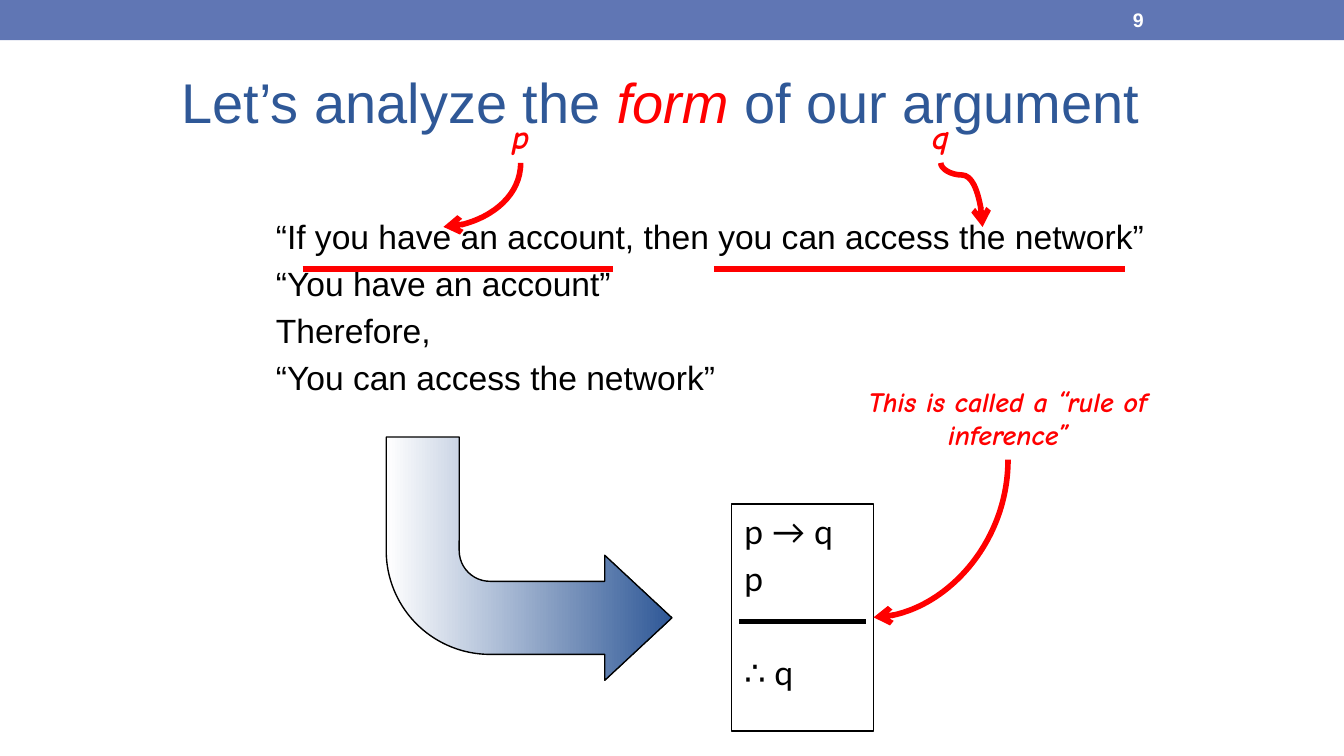
from dataclasses import dataclass

from lxml.etree import SubElement
from pptx import Presentation
from pptx.dml.color import RGBColor
from pptx.enum.shapes import MSO_CONNECTOR, MSO_SHAPE
from pptx.enum.text import MSO_ANCHOR, MSO_AUTO_SIZE, PP_ALIGN
from pptx.oxml.ns import qn
from pptx.util import Cm, Pt


@dataclass(frozen=True)
class Theme:
    bar: RGBColor = RGBColor(0x60, 0x76, 0xB4)
    accent: RGBColor = RGBColor(0x2F, 0x58, 0x97)
    red: RGBColor = RGBColor(0xFF, 0, 0)
    black: RGBColor = RGBColor(0, 0, 0)
    white: RGBColor = RGBColor(0xFF, 0xFF, 0xFF)
    main_font: str = "Arial"
    logic_font: str = "Lato"
    note_font: str = "Comic Neue"
    title: float = 30
    body: float = 18
    note: float = 15
    number: float = 10.5
    thin: float = 0.75
    thick: float = 3
    gap: float = 3.6


T = Theme()


def place(sp, left, top, width, height):
    sp.left, sp.top, sp.width, sp.height = Cm(left), Cm(top), Cm(width), Cm(height)


def style(p, font, size, color, bold=False, italic=False):
    for r in p.runs:
        f = r.font
        f.name, f.size, f.bold, f.italic = font, Pt(size), bold, italic
        f.color.rgb = color


def hang(p, margin, indent):
    pPr = p._p.get_or_add_pPr()
    pPr.set("marL", str(Cm(margin)))
    pPr.set("indent", str(Cm(indent)))
    SubElement(pPr, qn("a:buNone"))


def write_lines(tf, lines, font, margin, indent, gaps):
    tf.text = "\n".join(lines)
    for p, gap in zip(tf.paragraphs, gaps):
        p.alignment = PP_ALIGN.LEFT
        p.space_before = Pt(gap)
        style(p, font, T.body, T.black)
        hang(p, margin, indent)


def add_title(s):
    sp = s.shapes.title
    place(sp, 3.18, 0.97, 19.05, 1.9)
    tf = sp.text_frame
    tf.auto_size = MSO_AUTO_SIZE.NONE
    tf.vertical_anchor = MSO_ANCHOR.MIDDLE
    p = tf.paragraphs[0]
    p.alignment = PP_ALIGN.LEFT
    for text in ("Let’s analyze the ", "form ", "of our argument"):
        p.add_run().text = text
    style(p, T.main_font, T.title, T.accent)
    f = p.runs[1].font
    f.italic = True
    f.color.rgb = T.red


def add_argument(s):
    sp = s.placeholders[1]
    place(sp, 4.6, 3.96, 17.63, 4.29)
    tf = sp.text_frame
    tf.auto_size = MSO_AUTO_SIZE.NONE
    lines = ["“If you have an account, then you can access the network”",
             "“You have an account”",
             "Therefore,",
             "“You can access the network”"]
    write_lines(tf, lines, T.main_font, 1.27, -0.91, [T.gap] * 4)


def add_shape(s, kind, left, top, width, height):
    sp = s.shapes.add_shape(kind, Cm(left), Cm(top), Cm(width), Cm(height))
    sp.shadow.inherit = False
    sp.line.color.rgb = T.black
    sp.line.width = Pt(T.thin)
    return sp


def add_bar(s):
    sp = add_shape(s, MSO_SHAPE.RECTANGLE, 0, 0, 25.4, 0.76)
    sp.fill.solid()
    sp.fill.fore_color.rgb = T.bar
    sp.line.fill.background()


def add_rule_box(s):
    sp = add_shape(s, MSO_SHAPE.RECTANGLE, 13.82, 9.53, 2.69, 4.29)
    sp.fill.background()
    tf = sp.text_frame
    tf.vertical_anchor = MSO_ANCHOR.TOP
    write_lines(tf, ["p → q", "p", "∴ q"], T.logic_font, 0.95, -0.95,
                [T.gap, T.gap, 8 * T.gap])


def add_bent_arrow(s):
    sp = add_shape(s, MSO_SHAPE.BENT_ARROW, 7.3, 8.26, 5.4, 4.6)
    for i, value in enumerate((0.3, 0.257, 0.276, 0.426)):
        sp.adjustments[i] = value
    sp.rotation = 180
    sp._element.spPr.xfrm.set("flipH", "1")
    sp.fill.gradient()
    sp.fill.gradient_angle = 0
    for stop, color in zip(sp.fill.gradient_stops, (T.white, T.accent)):
        stop.color.rgb = color


def add_line(s, kind, x1, y1, x2, y2, color):
    c = s.shapes.add_connector(kind, Cm(x1), Cm(y1), Cm(x2), Cm(y2))
    c.line.color.rgb = color
    c.line.width = Pt(T.thick)
    SubElement(c._element.spPr, qn("a:effectLst"))
    return c


def add_curve(s, x1, y1, x2, y2):
    cx, cy = (x1 + x2) / 2, (y1 + y2) / 2
    half_w, half_h = (y2 - y1) / 2, abs(x2 - x1) / 2
    rightward = x2 > x1
    side = -1 if rightward else 1
    c = add_line(s, MSO_CONNECTOR.CURVE, cx - side * half_w, cy - half_h,
                 cx + side * half_w, cy + half_h, T.red)
    spPr = c._element.spPr
    spPr.find(qn("a:xfrm")).set("rot", str((270 if rightward else 90) * 60000))
    geom = spPr.find(qn("a:prstGeom"))
    if rightward:
        SubElement(geom.find(qn("a:avLst")), qn("a:gd"), name="adj1", fmla="val 18900")
    else:
        geom.set("prst", "curvedConnector2")
    SubElement(spPr.find(qn("a:ln")), qn("a:tailEnd"), type="arrow")


def add_text(s, text, left, top, width, height):
    sp = s.shapes.add_textbox(Cm(left), Cm(top), Cm(width), Cm(height))
    tf = sp.text_frame
    tf.word_wrap = True
    tf.text = text
    return tf


def add_note(s, text, size, cx, top, height, target):
    width = 6.35
    tf = add_text(s, text, cx - width / 2, top, width, height)
    tf.auto_size = MSO_AUTO_SIZE.SHAPE_TO_FIT_TEXT
    p = tf.paragraphs[0]
    p.alignment = PP_ALIGN.CENTER
    style(p, T.note_font, size, T.red, bold=True, italic=True)
    add_curve(s, cx, top + height, *target)


def add_number(s):
    tf = add_text(s, "9", 21.16, 0.03, 2.97, 0.69)
    tf.vertical_anchor = MSO_ANCHOR.MIDDLE
    style(tf.paragraphs[0], T.main_font, T.number, T.white, bold=True)


def main():
    prs = Presentation()
    prs.slide_width, prs.slide_height = Cm(25.4), Cm(14.29)
    s = prs.slides.add_slide(prs.slide_layouts[1])
    add_bar(s)
    add_title(s)
    add_argument(s)
    add_rule_box(s)
    add_line(s, MSO_CONNECTOR.STRAIGHT, 13.97, 11.75, 16.36, 11.75, T.black)
    add_bent_arrow(s)
    for x1, x2 in ((5.72, 11.59), (13.49, 21.27)):
        add_line(s, MSO_CONNECTOR.STRAIGHT, x1, 5.08, x2, 5.08, T.red)
    add_note(s, "This is called a “rule of inference”", T.note, 19.05, 7.14, 1.55, (16.51, 11.67))
    add_note(s, "p", T.body, 9.84, 2.06, 1.02, (8.38, 4.29))
    add_note(s, "q", T.body, 17.78, 2.06, 1.02, (18.57, 4.29))
    add_number(s)
    prs.save("out.pptx")


if __name__ == "__main__":
    main()
